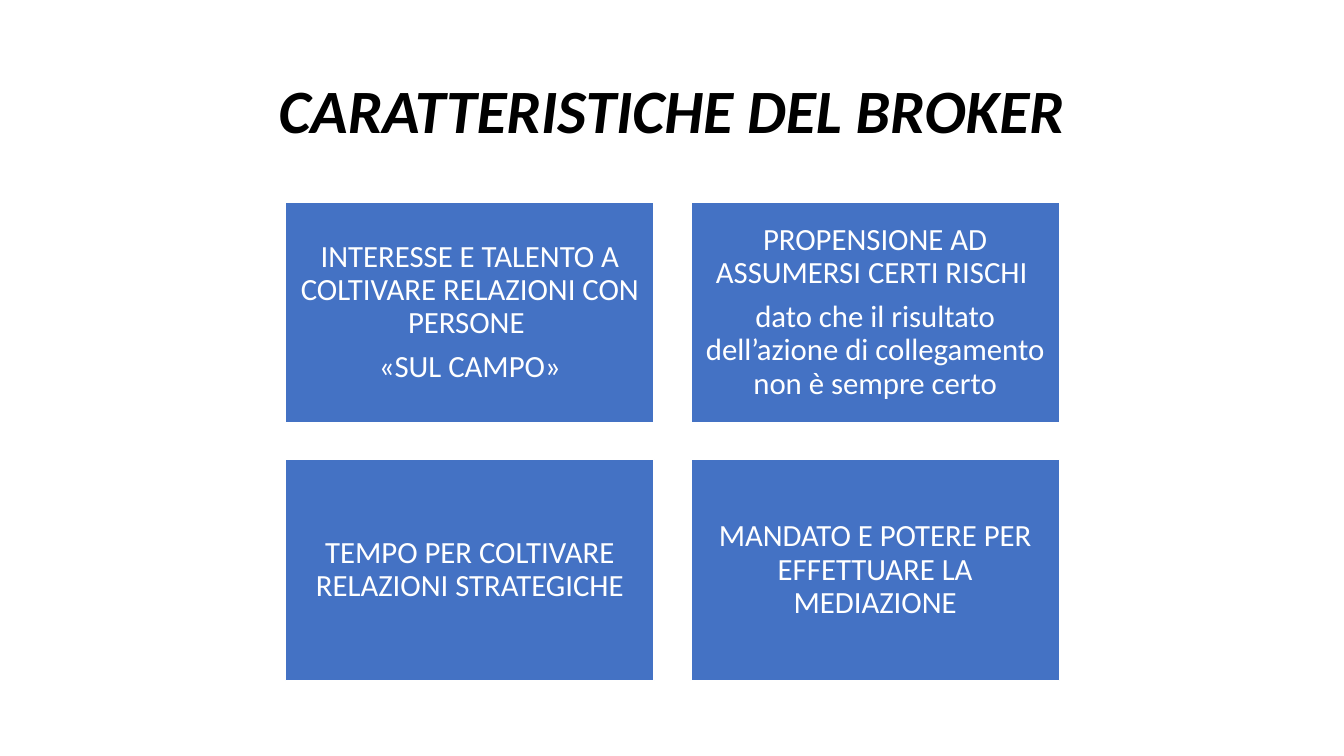
import pptx
import pptx.util
import pptx.dml.color
import pptx.enum.shapes
import pptx.enum.text

Pt = pptx.util.Pt
RGBColor = pptx.dml.color.RGBColor
MIDDLE = pptx.enum.text.MSO_ANCHOR.MIDDLE
CENTER = pptx.enum.text.PP_ALIGN.CENTER

BLACK = RGBColor(0x00, 0x00, 0x00)
WHITE = RGBColor(0xFF, 0xFF, 0xFF)
BLUE = RGBColor(0x44, 0x72, 0xC4)


def apply_format(target, values):
    for name, value in values.items():
        setattr(target, name, value)


def write_paragraph(para, text, color, font_values):
    apply_format(para, {"alignment": CENTER, "line_spacing": 0.9})
    span = para.add_run()
    span.text = text
    apply_format(span.font, {"name": "Calibri", **font_values})
    span.font.color.rgb = color


deck = pptx.Presentation()
apply_format(deck, {"slide_width": Pt(960), "slide_height": Pt(540)})
page = deck.slides.add_slide(deck.slide_layouts[5])

# Title
title = page.shapes.title
apply_format(title, {"left": Pt(66), "top": Pt(28.75),
                     "width": Pt(828), "height": Pt(104.4)})
title.text_frame.vertical_anchor = MIDDLE
write_paragraph(title.text_frame.paragraphs[0], "CARATTERISTICHE DEL BROKER",
                BLACK, {"size": Pt(44), "bold": True, "italic": True})

# Two-by-two grid of broker traits
TRAITS = [
    ["INTERESSE E TALENTO A COLTIVARE RELAZIONI CON PERSONE ", "«SUL CAMPO»"],
    ["PROPENSIONE AD ASSUMERSI CERTI RISCHI ",
     "dato che il risultato dell’azione di collegamento non è sempre certo"],
    ["TEMPO PER COLTIVARE RELAZIONI STRATEGICHE"],
    ["MANDATO E POTERE PER EFFETTUARE LA MEDIAZIONE"],
]
GRID_LEFT, GRID_TOP = 204, 144.2
BOX_WIDTH, BOX_HEIGHT, GAP = 263.2, 157.9, 26.3
INSET = Pt(6.6)
FRAME_FORMAT = {"word_wrap": True, "vertical_anchor": MIDDLE,
                "margin_left": INSET, "margin_right": INSET,
                "margin_top": INSET, "margin_bottom": INSET}

for index, texts in enumerate(TRAITS):
    row, column = divmod(index, 2)
    box = page.shapes.add_shape(
        pptx.enum.shapes.MSO_SHAPE.RECTANGLE,
        Pt(GRID_LEFT + column * (BOX_WIDTH + GAP)),
        Pt(GRID_TOP + row * (BOX_HEIGHT + GAP)),
        Pt(BOX_WIDTH), Pt(BOX_HEIGHT))
    box.shadow.inherit = False
    box.fill.solid()
    box.fill.fore_color.rgb = BLUE
    box.line.color.rgb = WHITE
    box.line.width = Pt(1)

    frame = box.text_frame
    apply_format(frame, FRAME_FORMAT)
    for number, text in enumerate(texts):
        para = frame.add_paragraph() if number else frame.paragraphs[0]
        para.space_before = Pt(7.7 if number else 0)
        write_paragraph(para, text, WHITE, {"size": Pt(22)})

deck.save("out.pptx")
